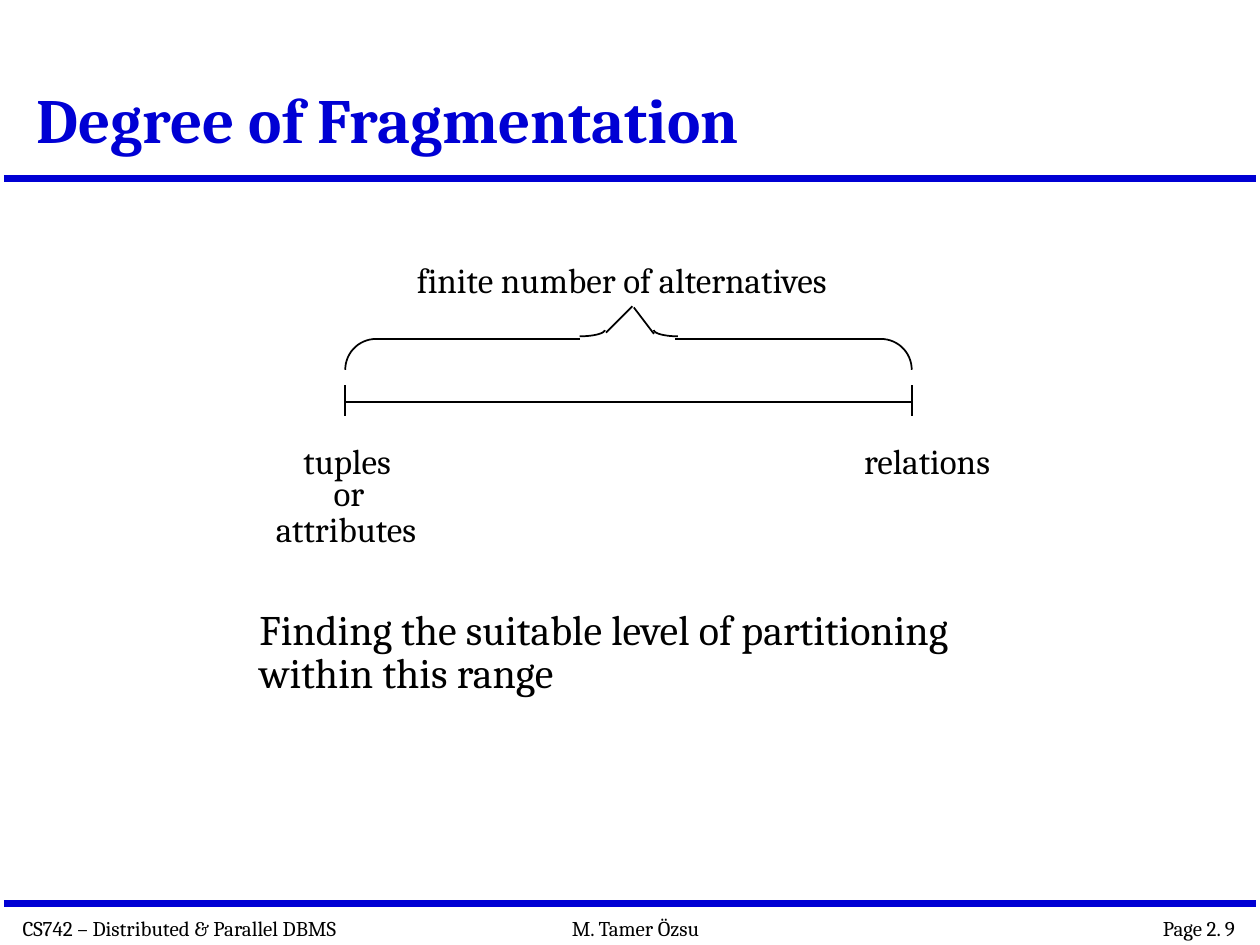
"""Build the slide on the degree of fragmentation."""
from math import cos, radians, sin

from lxml import etree
from pptx import Presentation
from pptx.dml.color import RGBColor
from pptx.enum.shapes import MSO_CONNECTOR
from pptx.enum.text import MSO_ANCHOR, MSO_AUTO_SIZE, PP_ALIGN
from pptx.oxml.ns import qn
from pptx.util import Pt

STRAIGHT = MSO_CONNECTOR.STRAIGHT
LEFT, RIGHT = PP_ALIGN.LEFT, PP_ALIGN.RIGHT
BOTTOM, TOP = MSO_ANCHOR.BOTTOM, MSO_ANCHOR.TOP
GROW, FIXED = MSO_AUTO_SIZE.SHAPE_TO_FIT_TEXT, MSO_AUTO_SIZE.NONE
BLUE, BLACK = RGBColor(0x00, 0x00, 0xD4), RGBColor(0x00, 0x00, 0x00)
FONT = "Cambria"

TITLE = "Degree of Fragmentation"
TITLE_BOX = (13.7, 54, 586.8, 39.6)
BODY = "Finding the suitable level of partitioning within this range"
BODY_BOX = (143.3, 347, 468.7, 82.1)
FOOTER_TOP, FOOTER_HEIGHT = 519.8, 21.6
FOOTERS = [
    ("CS742 – Distributed & Parallel DBMS", 5.8, 230.4, LEFT),
    ("M. Tamer Özsu", 319.7, 100, LEFT),
    ("Page 2. 9", 640.8, 72, RIGHT),
]
LABEL_HEIGHT = 31
LABELS = [
    ("finite number of alternatives", 231.1, 144, 280),
    ("tuples", 166.3, 247.7, 71.3),
    ("or", 183.6, 265.7, 33.1),
    ("attributes", 150.5, 286.6, 106.6),
    ("relations", 486.7, 247.7, 95.8),
]
RULES = [102.2, 516.2]
RANGE_LEFT, RANGE_RIGHT, RANGE_Y = 197.3, 521, 229.7
TICK_TOP, TICK_BOTTOM = 220.3, 237.6
BRACE_Y, CORNER = 193.7, 17.6
BRACE_LINES = [
    (RANGE_LEFT + CORNER, BRACE_Y, 331.2, BRACE_Y),
    (RANGE_RIGHT - CORNER, BRACE_Y, 385.9, BRACE_Y),
    (346.3, 190.1, 361.4, 175),
    (373.7, 190.8, 362.2, 175.7),
]
BRACE_ARCS = [
    (RANGE_LEFT + CORNER, BRACE_Y + CORNER, CORNER, CORNER, 90),
    (RANGE_RIGHT - CORNER, BRACE_Y + CORNER, CORNER, CORNER, 0),
    (331.2, 188.6, 14.4, 3.6, 270),
    (387.4, 188.6, 13.7, 3.6, 180),
]


def write(shape, text, size, color=BLACK, bold=False, align=LEFT, spacing=None,
          wrap=False, anchor=TOP, fit=GROW, inset=(7.2, 3.6)):
    tf = shape.text_frame
    tf.word_wrap, tf.auto_size, tf.vertical_anchor = wrap, fit, anchor
    tf.margin_left = tf.margin_right = Pt(inset[0])
    tf.margin_top = tf.margin_bottom = Pt(inset[1])
    p = tf.paragraphs[0]
    p.alignment, p.line_spacing = align, spacing
    r = p.add_run()
    r.text = text
    r.font.name, r.font.size, r.font.bold = FONT, Pt(size), bold
    r.font.color.rgb = color


def add_text(s, box, text, size, **style):
    write(s.shapes.add_textbox(*map(Pt, box)), text, size, **style)


def add_line(s, ends, color=BLACK, width=1):
    line = s.shapes.add_connector(STRAIGHT, *map(Pt, ends))
    line.line.color.rgb, line.line.width = color, Pt(width)
    etree.SubElement(line._element.spPr, qn("a:effectLst"))


def add_quarter_arc(s, cx, cy, rx, ry, start):
    angles = [radians(start + step) for step in range(0, 91, 6)]
    points = [(Pt(cx + rx * cos(a)), Pt(cy - ry * sin(a))) for a in angles]
    builder = s.shapes.build_freeform(*points[0])
    builder.add_line_segments(points[1:], close=False)
    arc = builder.convert_to_shape()
    arc.shadow.inherit = False
    arc.fill.background()
    arc.line.color.rgb, arc.line.width = BLACK, Pt(1)


def main():
    prs = Presentation()
    prs.slide_width, prs.slide_height = Pt(720), Pt(540)
    s = prs.slides.add_slide(prs.slide_layouts[5])

    for y in RULES:
        add_line(s, (2.2, y, 717.8, y), BLUE, 4)
    for text, x, width, align in FOOTERS:
        add_text(s, (x, FOOTER_TOP, width, FOOTER_HEIGHT), text, 12, align=align)

    title = s.shapes.title
    title.left, title.top, title.width, title.height = map(Pt, TITLE_BOX)
    write(title, TITLE, 36, color=BLUE, bold=True, spacing=0.9, wrap=True,
          anchor=BOTTOM, fit=FIXED)
    add_text(s, BODY_BOX, BODY, 24, spacing=0.85, wrap=True, inset=(5, 2.2))

    add_line(s, (RANGE_LEFT, RANGE_Y, RANGE_RIGHT, RANGE_Y))
    for x in (RANGE_LEFT, RANGE_RIGHT):
        add_line(s, (x, TICK_TOP, x, TICK_BOTTOM))
    for ends in BRACE_LINES:
        add_line(s, ends)
    for arc in BRACE_ARCS:
        add_quarter_arc(s, *arc)
    for text, x, y, width in LABELS:
        add_text(s, (x, y, width, LABEL_HEIGHT), text, 20)

    prs.save("out.pptx")


if __name__ == "__main__":
    main()
